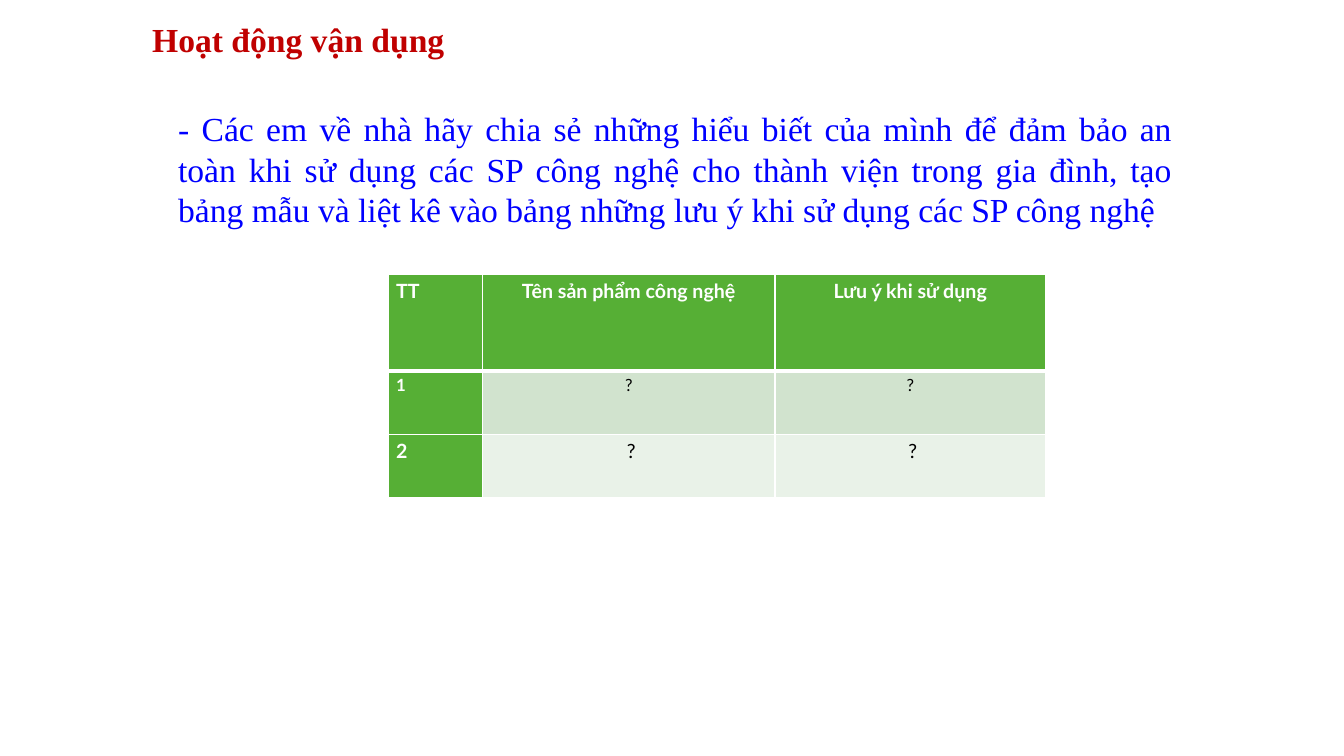
from dataclasses import dataclass

from lxml import etree
from pptx import Presentation
from pptx.dml.color import RGBColor
from pptx.enum.text import MSO_ANCHOR, MSO_AUTO_SIZE, PP_ALIGN
from pptx.oxml.ns import qn
from pptx.table import _Cell
from pptx.text.text import TextFrame, _Paragraph
from pptx.util import Cm, Pt

LEFT, CENTER, JUSTIFY = PP_ALIGN.LEFT, PP_ALIGN.CENTER, PP_ALIGN.JUSTIFY
TOP, MIDDLE = MSO_ANCHOR.TOP, MSO_ANCHOR.MIDDLE
GROW = MSO_AUTO_SIZE.SHAPE_TO_FIT_TEXT
TITLE_ONLY = 5

SERIF, SANS = "Times New Roman", "Lato"
RED, BLUE, GREEN = "C00000", "0000FF", "56AF35"
WHITE, BLACK = "FFFFFF", "000000"


@dataclass
class Style:
    font: str
    size: int
    color: str
    bold: bool = False


@dataclass
class TableRow:
    height: float
    texts: tuple[str, ...]
    size: int
    body_fill: str


COLUMN_WIDTHS = (2.36, 7.37, 6.82)
ROWS = (
    TableRow(2.44, ("TT", "Tên sản phẩm công nghệ", "Lưu ý khi sử dụng"), 14, GREEN),
    TableRow(1.6, ("1", "?", "?"), 12, "D1E3CE"),
    TableRow(1.6, ("2", " ?", " ?"), 14, "E9F2E8"),
)


def rgb(color: str) -> RGBColor:
    return RGBColor.from_string(color)


def write(para: _Paragraph, text: str, style: Style, align: PP_ALIGN) -> None:
    para.alignment = align
    span = para.add_run()
    span.text = text
    span.font.name = style.font
    span.font.size = Pt(style.size)
    span.font.bold = style.bold
    span.font.color.rgb = rgb(style.color)


def fill_frame(frame: TextFrame, text: str, style: Style,
               align: PP_ALIGN, anchor: MSO_ANCHOR) -> None:
    frame.word_wrap = True
    frame.auto_size = GROW
    frame.vertical_anchor = anchor
    write(frame.paragraphs[0], text, style, align)


def add_border(cell: _Cell, side: str, points: int) -> None:
    line = etree.SubElement(cell._tc.get_or_add_tcPr(), qn(f"a:ln{side}"), w=str(Pt(points)))
    paint = etree.SubElement(line, qn("a:solidFill"))
    etree.SubElement(paint, qn("a:srgbClr"), val=WHITE)


def format_cell(cell: _Cell, row: TableRow, row_index: int, column: int) -> None:
    is_heading = row_index == 0 or column == 0
    cell.margin_left = cell.margin_right = Cm(0.18)
    cell.margin_top = cell.margin_bottom = 0
    # A thick rule separates the header from the rows below it
    widths = {"L": 1, "R": 1, "T": 3 if row_index == 1 else 1, "B": 3 if row_index == 0 else 1}
    for side, points in widths.items():
        add_border(cell, side, points)
    cell.fill.solid()
    cell.fill.fore_color.rgb = rgb(GREEN if is_heading else row.body_fill)
    para = cell.text_frame.paragraphs[0]
    para.line_spacing = 1.2
    style = Style(SANS, row.size, WHITE if is_heading else BLACK, is_heading)
    write(para, row.texts[column], style, JUSTIFY if column == 0 else CENTER)


def main() -> None:
    deck = Presentation()
    deck.slide_width, deck.slide_height = Cm(33.87), Cm(19.05)
    page = deck.slides.add_slide(deck.slide_layouts[TITLE_ONLY])

    # Title
    title = page.shapes.title
    title.left, title.top, title.width, title.height = Cm(3.58), Cm(0.36), Cm(20.57), Cm(1.28)
    fill_frame(title.text_frame, "Hoạt động vận dụng", Style(SERIF, 24, RED, True), LEFT, TOP)

    # Product table
    table = page.shapes.add_table(
        len(ROWS), len(COLUMN_WIDTHS), Cm(9.8), Cm(6.91),
        Cm(sum(COLUMN_WIDTHS)), Cm(sum(row.height for row in ROWS))).table
    for column, width in enumerate(COLUMN_WIDTHS):
        table.columns[column].width = Cm(width)
    for row_index, row in enumerate(ROWS):
        table.rows[row_index].height = Cm(row.height)
        for column in range(len(COLUMN_WIDTHS)):
            format_cell(table.cell(row_index, column), row, row_index, column)

    # Homework task
    task = page.shapes.add_textbox(Cm(4.24), Cm(2.59), Cm(25.55), Cm(3.33))
    fill_frame(
        task.text_frame,
        "- Các em về nhà hãy chia sẻ những hiểu biết của mình để đảm bảo an toàn "
        "khi sử dụng các SP công nghệ cho thành viện trong gia đình, tạo bảng mẫu "
        "và liệt kê vào bảng những lưu ý khi sử dụng các SP công nghệ",
        Style(SERIF, 24, BLUE), JUSTIFY, MIDDLE)

    deck.save("out.pptx")


if __name__ == "__main__":
    main()
